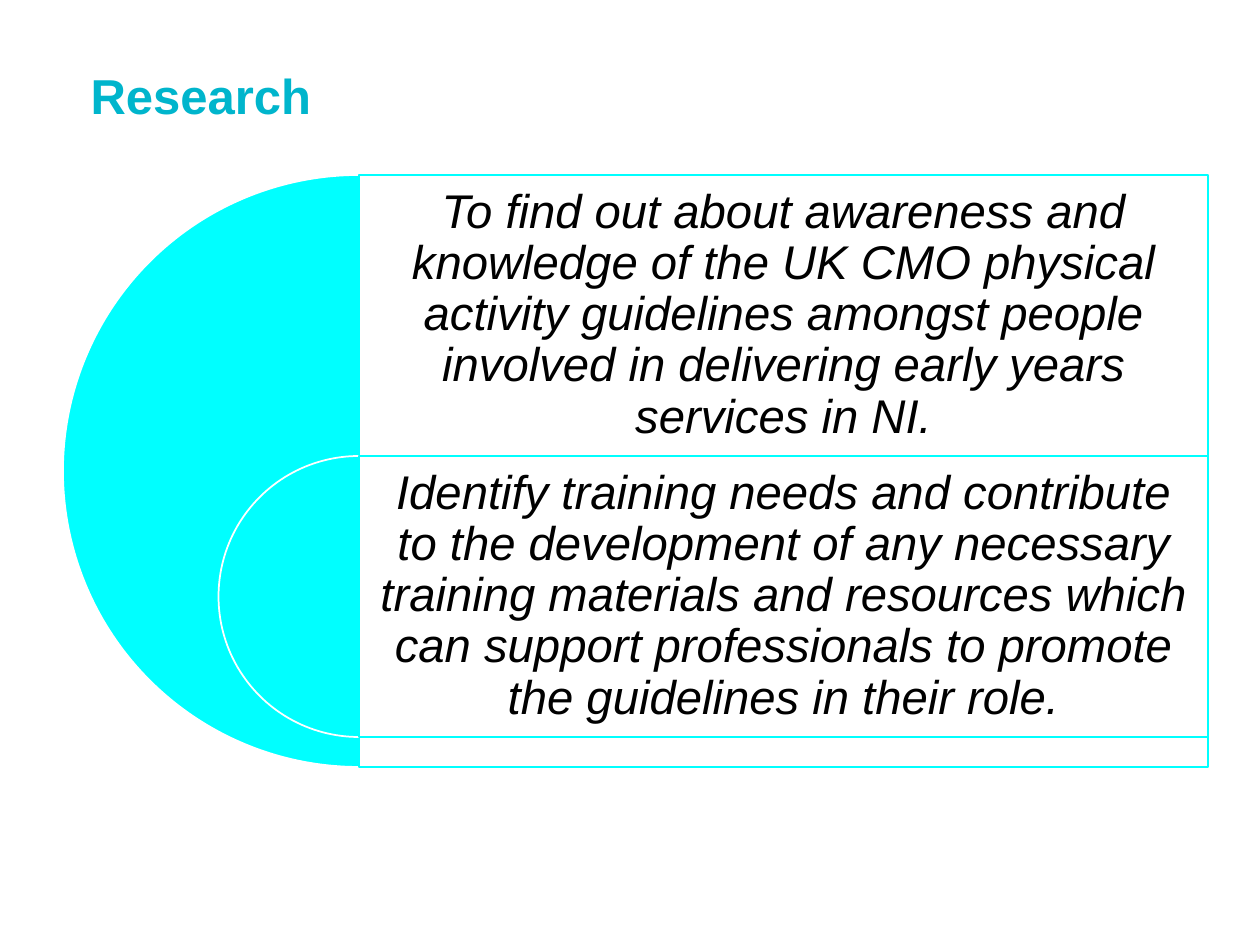
from pptx import Presentation
from pptx import util as u
from pptx.dml.color import RGBColor
from pptx.enum import shapes, text
from pptx.oxml.ns import qn
from lxml import etree

PX = 914400 / 126
FONT = "Arial"
CYAN, WHITE, BLACK, TEAL = "00FFFF", "FFFFFF", "000000", "00B5CC"
AIMS = [
    "To find out about awareness and knowledge of the UK CMO physical activity "
    "guidelines amongst people involved in delivering early years services in NI.",
    "Identify training needs and contribute to the development of any necessary "
    "training materials and resources which can support professionals to promote "
    "the guidelines in their role.",
]


def px(*lengths):
    return [u.Emu(round(length * PX)) for length in lengths]


def color(value):
    return RGBColor.from_string(value)


def add_run(paragraph, words, size, value, bold=False, italic=False):
    run = paragraph.add_run()
    run.text = words
    font = run.font
    font.name, font.size = FONT, u.Pt(size)
    font.bold, font.italic = bold, italic
    font.color.rgb = color(value)


def add_outlined(slide, kind, box, fill, line):
    shape = slide.shapes.add_shape(kind, *px(*box))
    shape.shadow.inherit = False
    shape.fill.solid()
    shape.fill.fore_color.rgb = color(fill)
    shape.line.color.rgb = color(line)
    shape.line.width = u.Pt(1)
    return shape


def add_half_disc(slide, center_x, top, diameter):
    box = (center_x - diameter / 2, top, diameter, diameter)
    disc = add_outlined(slide, shapes.MSO_SHAPE.PIE, box, CYAN, WHITE)
    # Left half: from 90 to 270 degrees
    disc.adjustments[0] = 54
    disc.adjustments[1] = 162


def add_panel(slide, box):
    panel = add_outlined(slide, shapes.MSO_SHAPE.RECTANGLE, box, WHITE, CYAN)
    fill_color = panel.fill._xPr.find(qn("a:solidFill"))[0]
    etree.SubElement(fill_color, qn("a:alpha"), val="90000")


def add_aim_text(slide, box, words):
    frame = slide.shapes.add_textbox(*px(*box)).text_frame
    frame.word_wrap = True
    frame.vertical_anchor = text.MSO_ANCHOR.MIDDLE
    inset, = px(14)
    frame.margin_left = frame.margin_right = inset
    frame.margin_top = frame.margin_bottom = inset
    paragraph = frame.paragraphs[0]
    paragraph.alignment = text.PP_ALIGN.CENTER
    paragraph.line_spacing = 0.9
    add_run(paragraph, words, 27, BLACK, italic=True)


def add_title(slide, box, words):
    title = slide.shapes.title
    title.left, title.top, title.width, title.height = px(*box)
    frame = title.text_frame
    frame.word_wrap = True
    frame.vertical_anchor = text.MSO_ANCHOR.MIDDLE
    paragraph = frame.paragraphs[0]
    paragraph.alignment = text.PP_ALIGN.LEFT
    add_run(paragraph, words, 28, TEAL, bold=True)


def add_nested_targets(slide, box, aims):
    """Half discs share one center line; each panel runs from its top to the right."""
    left, top, width, height = box
    row_height = 281
    center_x = left + height / 2
    panel_width = width - height / 2
    for index, aim in enumerate(aims):
        row_top = top + index * row_height
        diameter = height if index == 0 else row_height
        add_half_disc(slide, center_x, row_top, diameter)
        add_panel(slide, (center_x, row_top, panel_width, diameter))
        add_aim_text(slide, (center_x, row_top, panel_width, row_height), aim)


def main():
    presentation = Presentation()
    presentation.slide_width, presentation.slide_height = px(1260, 945)
    slide = presentation.slides.add_slide(presentation.slide_layouts[5])
    add_title(slide, (78, 26, 1113, 137), "Research")
    add_nested_targets(slide, (63, 175, 1145, 592), AIMS)
    presentation.save("out.pptx")


if __name__ == "__main__":
    main()
